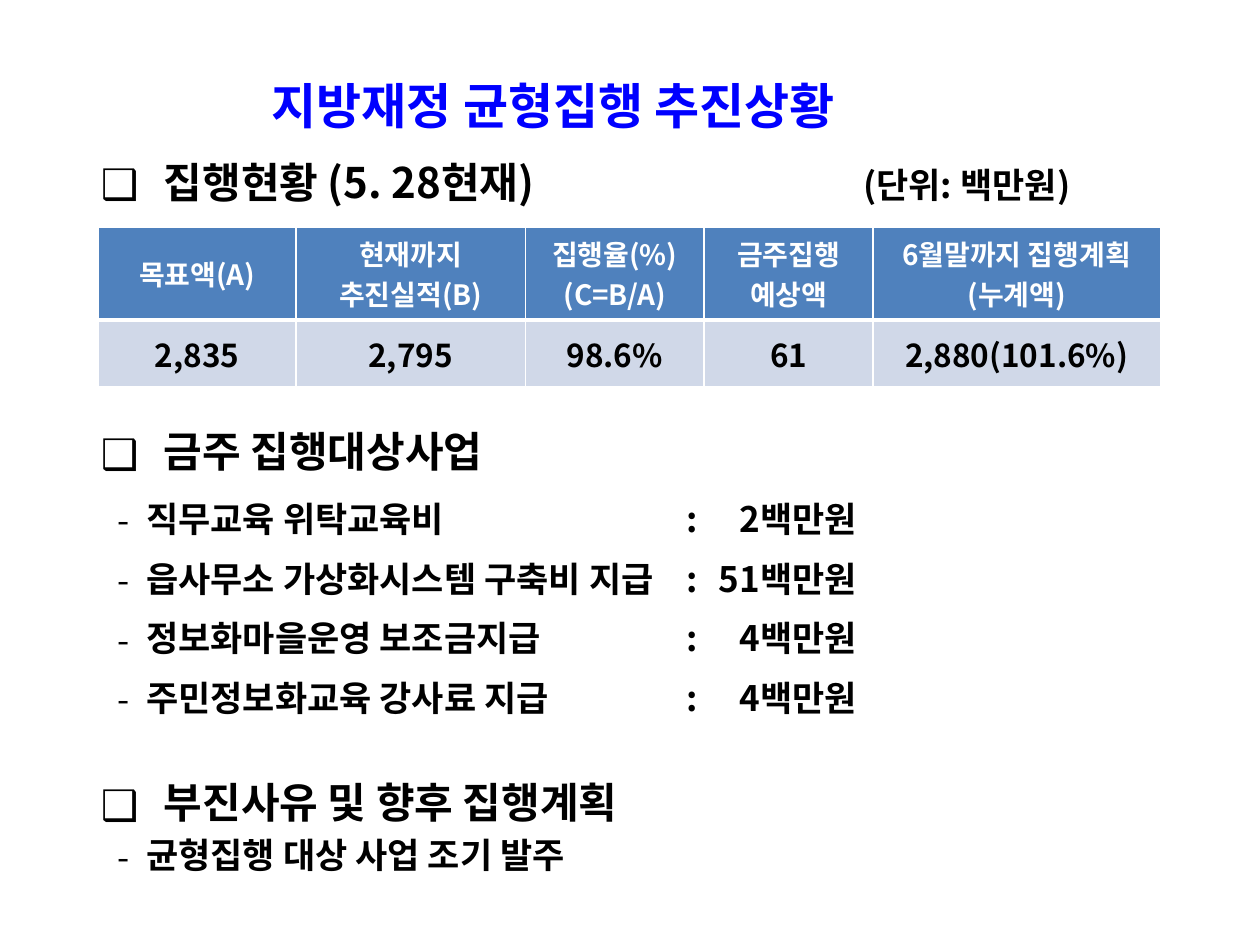
from lxml import etree
from pptx import Presentation
from pptx.dml.color import RGBColor
from pptx.enum.text import MSO_ANCHOR, MSO_AUTO_SIZE, PP_ALIGN
from pptx.oxml.ns import qn
from pptx.util import Inches, Pt

CENTER, LEFT = PP_ALIGN.CENTER, PP_ALIGN.LEFT
MIDDLE, TOP = MSO_ANCHOR.MIDDLE, MSO_ANCHOR.TOP
NO_FIT = MSO_AUTO_SIZE.NONE
FONT = "Noto Sans CJK KR"
BLACK, WHITE, BLUE = "000000", "FFFFFF", "0000FF"
HEADER_FILL, ROW_FILL = "4F81BD", "D0D8E8"
COLUMNS, ROWS = 100, 75
LINE_PITCH = 28

HEADERS = ["목표액(A)", "현재까지\n추진실적(B)", "집행율(%)\n(C=B/A)",
           "금주집행\n예상액", "6월말까지 집행계획\n(누계액)"]
VALUES = ["2,835", "2,795", "98.6%", "61", "2,880(101.6%)"]
PROJECTS = [("직무교육 위탁교육비", "2백만원", 8),
            ("읍사무소 가상화시스템 구축비 지급", "51백만원", 6.5),
            ("정보화마을운영 보조금지급", "4백만원", 6),
            ("주민정보화교육 강사료 지급", "4백만원", 6)]


def color(code):
    """Turn a hex string into a colour."""
    return RGBColor.from_string(code)


class Slide:
    """Holds the style and the current page, with a method per element."""

    def __init__(self, deck):
        self.page = deck.slides.add_slide(deck.slide_layouts[1])
        self.column = deck.slide_width / COLUMNS
        self.row = deck.slide_height / ROWS

    def grid(self, left, top, width, height):
        return (int(left * self.column), int(top * self.row),
                int(width * self.column), int(height * self.row))

    def span(self, para, text, size, code=BLACK):
        span = para.add_run()
        span.text = text
        font = span.font
        font.name, font.size, font.bold = FONT, Pt(size), True
        font.color.rgb = color(code)
        etree.SubElement(font._element, qn("a:ea"), typeface=FONT)

    def place(self, box, area, anchor):
        box.left, box.top, box.width, box.height = self.grid(*area)
        frame = box.text_frame
        frame.word_wrap, frame.auto_size = True, NO_FIT
        frame.vertical_anchor = anchor
        return frame

    def title(self, text, area):
        para = self.place(self.page.shapes.title, area, MIDDLE).paragraphs[0]
        para.alignment = CENTER
        self.span(para, text, 28, BLUE)

    def body(self, area):
        self.frame = self.place(self.page.placeholders[1], area, TOP)
        self.fresh = True

    def line(self, spans, bullet, margin, indent, before, tabs=()):
        para = self.frame.paragraphs[0] if self.fresh else self.frame.add_paragraph()
        self.fresh = False
        para.alignment = LEFT
        para.line_spacing, para.space_before = Pt(LINE_PITCH), Pt(before)
        para.space_after = Pt(0)
        props = para._p.get_or_add_pPr()
        props.set("marL", str(Inches(margin)))
        props.set("indent", str(Inches(-indent)))
        tint = etree.SubElement(props, qn("a:buClr"))
        etree.SubElement(tint, qn("a:srgbClr"), val=BLACK)
        etree.SubElement(props, qn("a:buFont"), typeface=FONT)
        etree.SubElement(props, qn("a:buChar"), char=bullet)
        stops = etree.SubElement(props, qn("a:tabLst"))
        for position, side in tabs:
            etree.SubElement(stops, qn("a:tab"), pos=str(Inches(position)), algn=side)
        for text, size in spans:
            self.span(para, text, size)

    def heading(self, text, before=0, note=""):
        spans = [(text, 24)] + ([("\t" + note, 20)] if note else [])
        self.line(spans, "❑", 0.5, 0.5, before, [(6.05, "l")])

    def item(self, text, before=0):
        self.line([(text, 20)], "-", 0.36, 0.23, before, [(4.65, "l"), (6, "r")])

    def border(self, cell, widths):
        props = cell._tc.get_or_add_tcPr()
        for index, (side, width) in enumerate(zip("LRTB", widths)):
            edge = etree.Element(qn("a:ln" + side), w=str(Pt(width)))
            fill = etree.SubElement(edge, qn("a:solidFill"))
            etree.SubElement(fill, qn("a:srgbClr"), val=WHITE)
            props.insert(index, edge)

    def table(self, area, widths, heights, styles):
        shape = self.page.shapes.add_table(len(styles), len(widths), *self.grid(*area))
        table = shape.table
        for column, width in zip(table.columns, widths):
            column.width = int(width * self.column)
        for row, height, style in zip(table.rows, heights, styles):
            row.height = int(height * self.row)
            texts, size, ink, fill, edges = style
            for cell, text in zip(row.cells, texts):
                cell.fill.solid()
                cell.fill.fore_color.rgb = color(fill)
                cell.vertical_anchor = MIDDLE
                self.border(cell, edges)
                for index, part in enumerate(text.split("\n")):
                    frame = cell.text_frame
                    para = frame.add_paragraph() if index else frame.paragraphs[0]
                    para.alignment = CENTER
                    self.span(para, part, size, ink)


def main():
    deck = Presentation()
    deck.slide_width, deck.slide_height = Inches(10), Inches(7.5)
    slide = Slide(deck)
    slide.title("지방재정 균형집행 추진상황", (8, 5.3, 71.8, 6))
    slide.body((7, 12, 86, 59))
    slide.heading("집행현황 (5. 28현재)", note="(단위: 백만원)")
    slide.heading("금주 집행대상사업", before=126)
    for name, amount, before in PROJECTS:
        slide.item(f"{name}\t:\t{amount}", before)
    slide.heading("부진사유 및 향후 집행계획", before=34)
    slide.item("균형집행 대상 사업 조기 발주")
    slide.table((7.8, 18, 84.3, 12.7), [15.7, 18.2, 14.2, 13.4, 22.8], [7.4, 5.3],
                [(HEADERS, 16, WHITE, HEADER_FILL, (1, 1, 1, 3)),
                 (VALUES, 18, BLACK, ROW_FILL, (1, 1, 3, 1))])
    deck.save("out.pptx")


if __name__ == "__main__":
    main()
